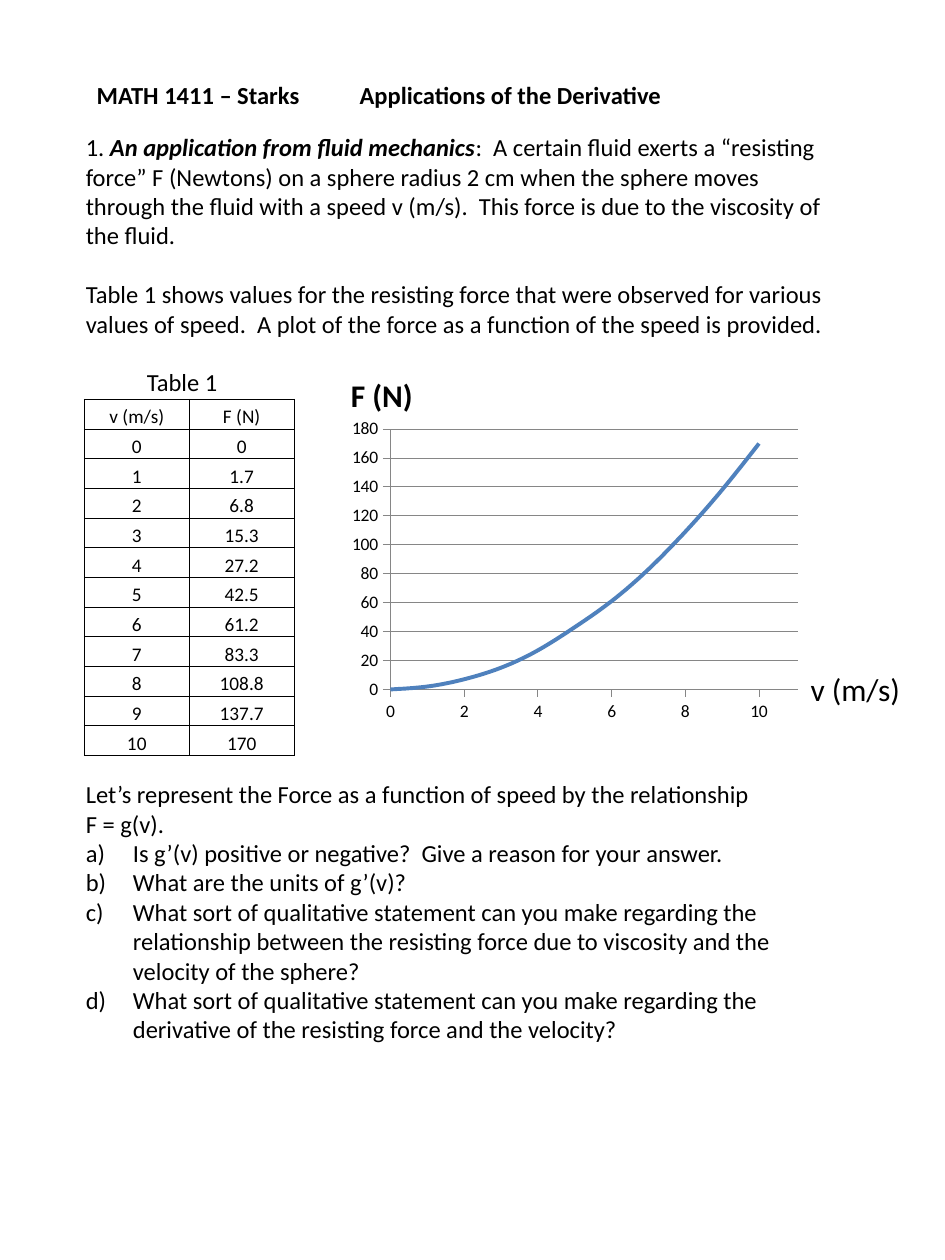
from lxml import etree
from pptx import Presentation
from pptx import util as u
from pptx.chart import data as chart_data
from pptx.dml import color
from pptx.enum import chart as chart_enum, shapes, text
from pptx.oxml import ns, parse_xml

FONT = "Calibri"
BLACK, WHITE, GRAY, BLUE = "000000", "FFFFFF", "868686", "4F81BD"
LINE = 16.8

HEADER = ("MATH 1411 – Starks", "Applications of the Derivative")
FORCES = [0, 1.7, 6.8, 15.3, 27.2, 42.5, 61.2, 83.3, 108.8, 137.7, 170]
COLUMNS = ("v (m/s)", "F (N)")
BODY = [
    {"runs": [
        ("1. ", False),
        ("An application from fluid mechanics", True),
        (":  A certain fluid exerts a “resisting force” F (Newtons) on a sphere radius 2 cm "
         "when the sphere moves through the fluid with a speed v (m/s).  This force is due to "
         "the viscosity of the fluid.", False)]},
    {"runs": [
        ("Table 1 shows values for the resisting force that were observed for various values of "
         "speed.  A plot of the force as a function of the speed is provided.", False)],
     "lines_before": 1},
    {"runs": [("Table 1", False)], "lines_before": 1, "indent": 1.23},
    {"runs": [("Let’s represent the Force as a function of speed by the relationship", False)],
     "lines_before": 13},
    {"runs": [("F = g(v).", False)]},
]
QUESTIONS = [
    "Is g’(v) positive or negative?  Give a reason for your answer.",
    "What are the units of g’(v)?",
    "What sort of qualitative statement can you make regarding the relationship between the "
    "resisting force due to viscosity and the velocity of the sphere?",
    "What sort of qualitative statement can you make regarding the derivative of the resisting "
    "force and the velocity?",
]


def rgb(value):
    return color.RGBColor.from_string(value)


def style(font, size, bold=False, italic=False):
    font.name, font.size, font.bold, font.italic = FONT, u.Pt(size), bold, italic
    font.color.rgb = rgb(BLACK)


def add_run(para, words, size, bold=False, italic=False):
    span = para.add_run()
    span.text = words
    style(span.font, size, bold, italic)


def add_child(parent, tag, **attributes):
    return etree.SubElement(parent, ns.qn(tag), attributes)


def set_indent(para, margin, first):
    props = para._p.get_or_add_pPr()
    props.set("marL", str(u.Cm(margin)))
    props.set("indent", str(u.Cm(first)))
    return props


def add_body(page):
    box = page.shapes.add_textbox(u.Cm(1.48), u.Cm(2.54), u.Cm(15.44), u.Cm(18.8))
    frame = box.text_frame
    frame.word_wrap = True
    items = BODY + [{"runs": [(question, False)], "numbered": True} for question in QUESTIONS]
    for index, item in enumerate(items):
        para = frame.paragraphs[0] if index == 0 else frame.add_paragraph()
        if "numbered" in item:
            props = set_indent(para, 0.95, -0.95)
            add_child(props, "a:buFont", typeface="+mj-lt")
            add_child(props, "a:buAutoNum", type="alphaLcParenR")
        if "indent" in item:
            set_indent(para, item["indent"], 0)
        if "lines_before" in item:
            para.space_before = u.Pt(round(item["lines_before"] * LINE, 1))
        for words, emphasis in item["runs"]:
            add_run(para, words, 14, emphasis, emphasis)


def add_values_table(page):
    rows = [COLUMNS] + [(speed, force) for speed, force in enumerate(FORCES)]
    frame = page.shapes.add_table(len(rows), 2, u.Cm(1.7), u.Cm(8.05), u.Cm(4.23), u.Cm(7.18))
    table = frame.table
    table.first_row = table.horz_banding = False
    for row, values in zip(table.rows, rows):
        for cell, value in zip(row.cells, values):
            cell.margin_left = cell.margin_right = cell.margin_top = cell.margin_bottom = 0
            cell.vertical_anchor = text.MSO_ANCHOR.BOTTOM
            para = cell.text_frame.paragraphs[0]
            para.alignment = text.PP_ALIGN.CENTER
            add_run(para, str(value), 11)
            props = cell._tc.get_or_add_tcPr()
            for side in ("a:lnL", "a:lnR", "a:lnT", "a:lnB"):
                border = add_child(props, side, w=str(u.Pt(0.5)))
                add_child(add_child(border, "a:solidFill"), "a:srgbClr", val=BLACK)
            cell.fill.background()


def manual_layout(**settings):
    parts = "".join(f'<c:{tag} val="{value}"/>' for tag, value in settings.items())
    return parse_xml(f'<c:layout {ns.nsdecls("c")}><c:manualLayout>{parts}'
                     '</c:manualLayout></c:layout>')


def format_axis(axis, maximum, step):
    axis.minimum_scale, axis.maximum_scale, axis.major_unit = 0, maximum, step
    axis.major_tick_mark = chart_enum.XL_TICK_MARK.OUTSIDE
    axis.minor_tick_mark = chart_enum.XL_TICK_MARK.NONE
    axis.tick_labels.number_format = "General"
    axis.tick_labels.number_format_is_linked = False
    axis.format.line.color.rgb = rgb(GRAY)
    axis.format.line.width = u.Pt(0.5)


def add_force_chart(page):
    data = chart_data.XyChartData()
    series = data.add_series(COLUMNS[1])
    for speed, force in enumerate(FORCES):
        series.add_data_point(speed, int(force + 0.5))
    chart = page.shapes.add_chart(
        chart_enum.XL_CHART_TYPE.XY_SCATTER_SMOOTH_NO_MARKERS,
        u.Cm(6.78), u.Cm(6.99), u.Cm(10.58), u.Cm(7.62), data).chart
    style(chart.font, 10)
    chart.has_legend = False
    chart.has_title = True
    add_run(chart.chart_title.text_frame.paragraphs[0], COLUMNS[1], 18, True)
    title = chart.chart_title._element
    for layout in title.findall(ns.qn("c:layout")):
        title.remove(layout)
    title.find(ns.qn("c:tx")).addnext(manual_layout(xMode="edge", yMode="edge", x=0.017, y=0.056))

    format_axis(chart.category_axis, 12, 2)
    format_axis(chart.value_axis, 180, 20)
    chart.category_axis.has_major_gridlines = False
    chart.value_axis.has_major_gridlines = True
    grid = chart.value_axis.major_gridlines.format.line
    grid.color.rgb, grid.width = rgb(GRAY), u.Pt(0.5)

    plot = chart.plots[0]
    plot.vary_by_categories = False
    curve = plot.series[0]
    curve._element.get_or_add_smooth().val = True
    curve.marker.style = chart_enum.XL_MARKER_STYLE.NONE
    curve.format.line.color.rgb = rgb(BLUE)
    curve.format.line.width = u.Pt(2.25)
    area = chart._chartSpace.find(".//" + ns.qn("c:plotArea"))
    for layout in area.findall(ns.qn("c:layout")):
        area.remove(layout)
    area.insert(0, manual_layout(layoutTarget="inner", xMode="edge", yMode="edge",
                                 x=0.103, y=0.218, w=0.843, h=0.689))


def add_speed_label(page):
    panel = page.shapes.add_shape(shapes.MSO_SHAPE.RECTANGLE,
                                  u.Cm(16.09), u.Cm(8.05), u.Cm(2.33), u.Cm(7.2))
    panel.shadow.inherit = False
    panel.fill.solid()
    panel.fill.fore_color.rgb = rgb(WHITE)
    panel.line.fill.background()
    frame = panel.text_frame
    frame.word_wrap = False
    frame.vertical_anchor = text.MSO_ANCHOR.BOTTOM
    frame.margin_bottom = u.Cm(0.98)
    para = frame.paragraphs[0]
    para.alignment = text.PP_ALIGN.LEFT
    add_run(para, COLUMNS[0], 18)


def add_header(page):
    box = page.shapes.add_textbox(u.Cm(1.7), u.Cm(1.48), u.Cm(12), u.Cm(0.86))
    box.text_frame.word_wrap = False
    para = box.text_frame.paragraphs[0]
    tabs = add_child(para._p.get_or_add_pPr(), "a:tabLst")
    add_child(tabs, "a:tab", pos=str(u.Cm(5.3)), algn="l")
    add_run(para, "\t".join(HEADER), 14, True)


def main():
    deck = Presentation()
    deck.slide_width, deck.slide_height = u.Cm(19.05), u.Cm(25.4)
    page = deck.slides.add_slide(deck.slide_layouts[6])
    add_body(page)
    add_values_table(page)
    add_force_chart(page)
    add_speed_label(page)
    add_header(page)
    deck.save("out.pptx")


if __name__ == "__main__":
    main()
